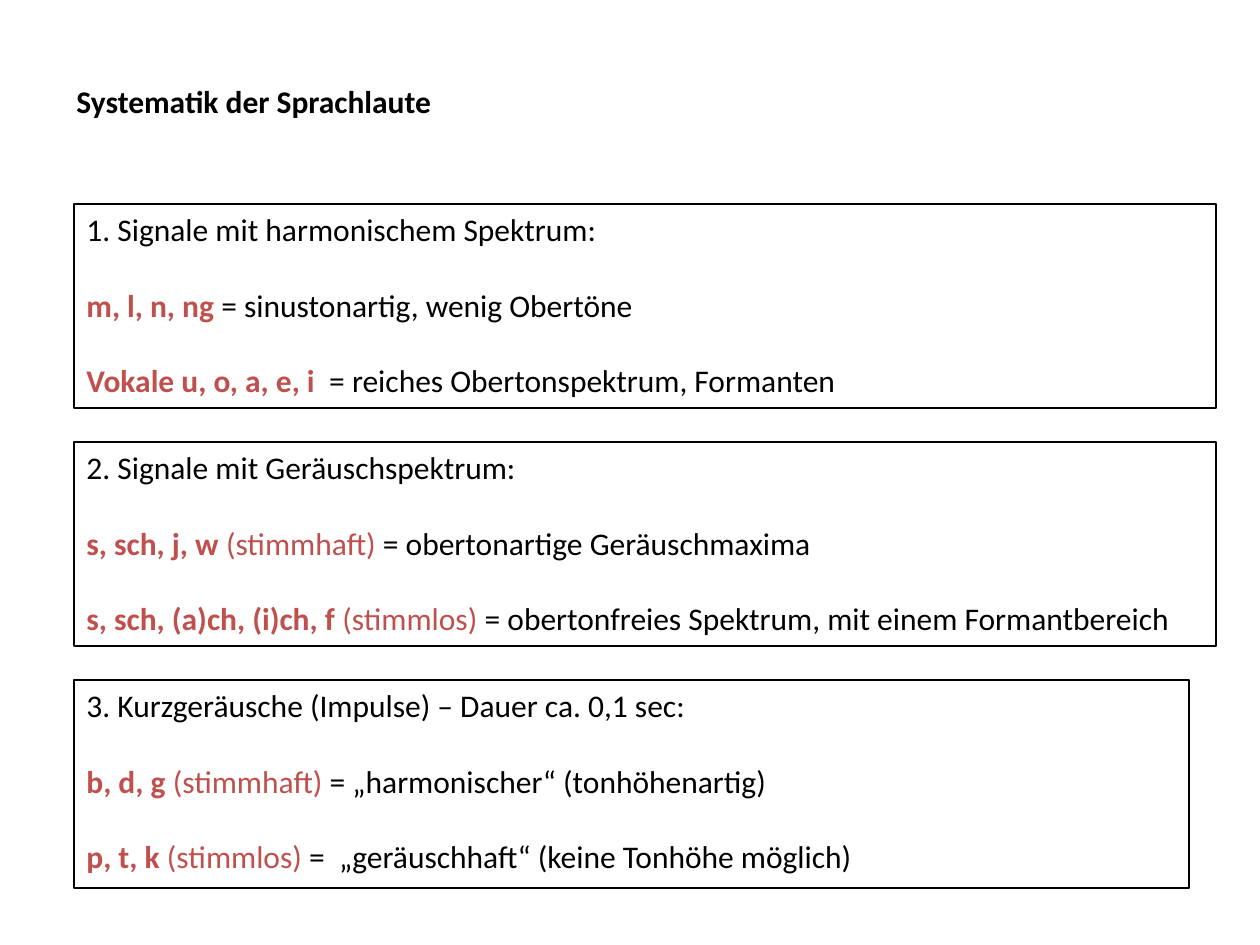
"""Build the slide on the classification of speech sounds."""
from pptx import Presentation
from pptx.dml.color import RGBColor
from pptx.enum.shapes import MSO_SHAPE
from pptx.enum.text import MSO_ANCHOR, PP_ALIGN
from pptx.util import Emu, Pt

COLORS = {"text": "000000", "accent": "C0504D", "line": "000000"}
STYLES = {
    "plain": {"bold": False, "color": "text"},
    "title": {"bold": True, "color": "text"},
    "sound": {"bold": True, "color": "accent"},
    "voice": {"bold": False, "color": "accent"},
}
FONT = {"name": "Calibri", "size": Pt(18)}
TITLE = [[("Systematik der Sprachlaute", "title")]]
TITLE_BOX = (64, 76, 383, 50)
GROUPS = [
    {"size": (1142, 204), "lines": [
        [("1. Signale mit harmonischem Spektrum:", "plain")],
        [("m, l, n, ng", "sound"), (" = sinustonartig, wenig Obertöne", "plain")],
        [("Vokale u, o, a, e, i ", "sound"),
         (" = reiches Obertonspektrum, Formanten", "plain")],
    ]},
    {"size": (1142, 204), "lines": [
        [("2. Signale mit Geräuschspektrum:", "plain")],
        [("s, sch, j, w ", "sound"), ("(stimmhaft) ", "voice"),
         ("= obertonartige Geräuschmaxima", "plain")],
        [("s, sch, (a)ch, (i)ch, f ", "sound"), ("(stimmlos)", "voice"),
         (" = obertonfreies Spektrum, mit einem Formantbereich", "plain")],
    ]},
    {"size": (1115, 208), "lines": [
        [("3. Kurzgeräusche (Impulse) – Dauer ca. 0,1 sec:", "plain")],
        [("b, d, g ", "sound"), ("(stimmhaft) ", "voice"),
         ("= „harmonischer“ (tonhöhenartig)", "plain")],
        [("p, t, k ", "sound"), ("(stimmlos)", "voice"),
         (" =  „geräuschhaft“ (keine Tonhöhe möglich)", "plain")],
    ]},
]
GROUP_LEFT, GROUP_TOP, GROUP_PITCH = 74, 204, 238
LINE_GAP = Pt(21.6)
FRAME = {"vertical_anchor": MSO_ANCHOR.TOP}


def px(length):
    return Emu(round(length * 914400 / 126))


def set_attributes(target, values):
    for name, value in values.items():
        setattr(target, name, value)


def write_lines(shape, lines, wrap):
    frame = shape.text_frame
    set_attributes(frame, {**FRAME, "word_wrap": wrap})
    for index, line in enumerate(lines):
        paragraph = frame.add_paragraph() if index else frame.paragraphs[0]
        paragraph.alignment = PP_ALIGN.LEFT
        if index:
            paragraph.space_before = LINE_GAP
        for text, style in line:
            run = paragraph.add_run()
            run.text = text
            set_attributes(run.font, {**FONT, "bold": STYLES[style]["bold"]})
            run.font.color.rgb = RGBColor.from_string(COLORS[STYLES[style]["color"]])


def add_group(slide, index, group):
    box = (GROUP_LEFT, GROUP_TOP + index * GROUP_PITCH, *group["size"])
    shape = slide.shapes.add_shape(MSO_SHAPE.RECTANGLE, *map(px, box))
    shape.shadow.inherit = False
    shape.fill.background()
    shape.line.color.rgb = RGBColor.from_string(COLORS["line"])
    shape.line.width = Pt(0.75)
    write_lines(shape, group["lines"], True)


def main():
    presentation = Presentation()
    set_attributes(presentation, {"slide_width": px(1260), "slide_height": px(945)})
    slide = presentation.slides.add_slide(presentation.slide_layouts[6])
    for index, group in enumerate(GROUPS):
        add_group(slide, index, group)
    title = slide.shapes.add_textbox(*map(px, TITLE_BOX))
    write_lines(title, TITLE, False)
    presentation.save("out.pptx")


if __name__ == "__main__":
    main()
